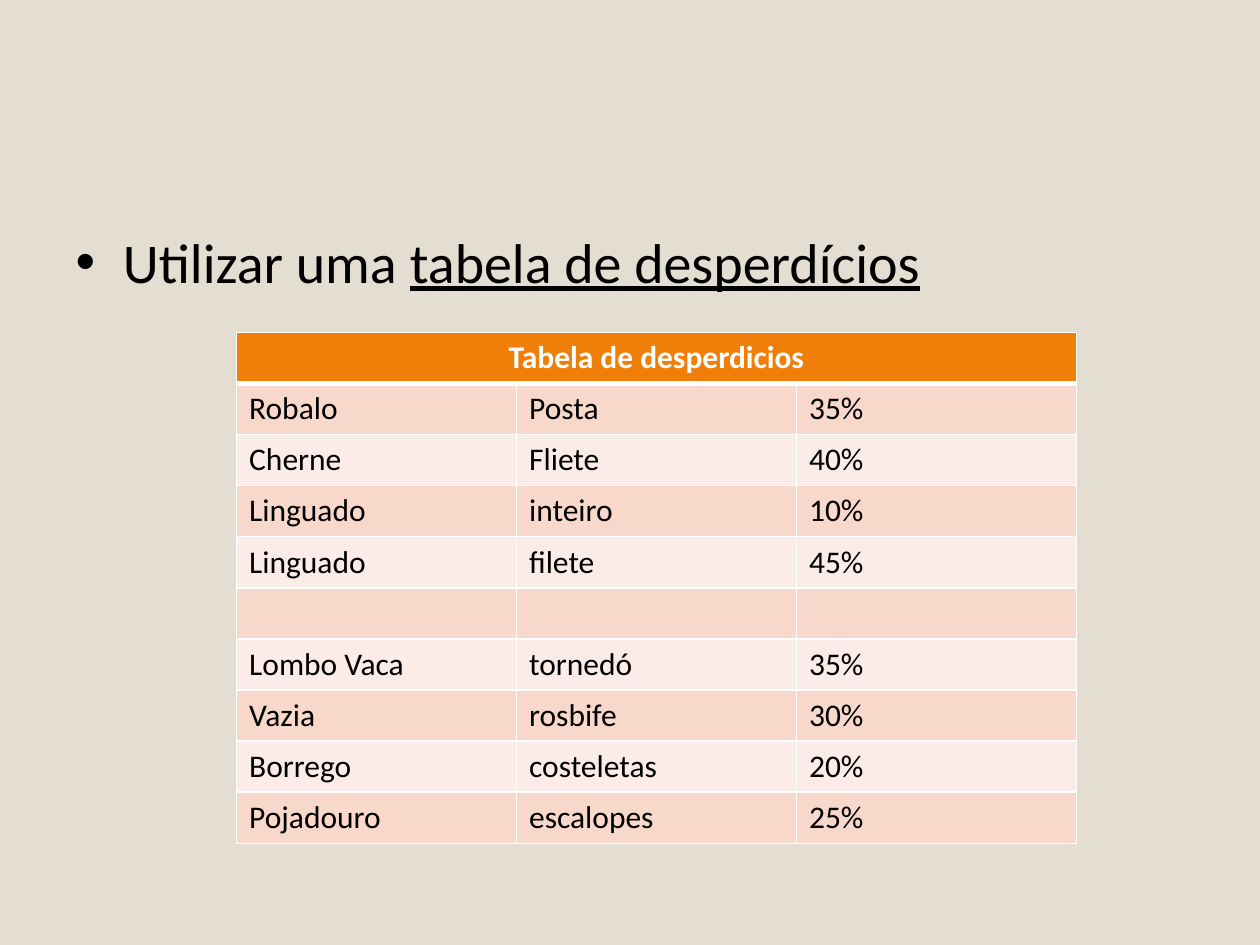
from lxml import etree
from pptx import Presentation
from pptx import util as u
from pptx.dml.color import RGBColor
from pptx.enum import text
from pptx.oxml.ns import qn

SAND = RGBColor(0xE3, 0xDE, 0xD1)
ORANGE = RGBColor(0xF0, 0x7F, 0x09)
ROSE = RGBColor(0xF9, 0xD8, 0xCC)
PALE = RGBColor(0xFC, 0xEC, 0xE7)
BLACK = RGBColor(0, 0, 0)
WHITE = RGBColor(255, 255, 255)
FONT = "Calibri"

HEAD = "Tabela de desperdicios"
ROWS = [
    ("Robalo", "Posta", "35%"),
    ("Cherne", "Fliete", "40%"),
    ("Linguado", "inteiro", "10%"),
    ("Linguado", "filete", "45%"),
    ("", "", ""),
    ("Lombo Vaca", "tornedó", "35%"),
    ("Vazia", "rosbife", "30%"),
    ("Borrego", "costeletas", "20%"),
    ("Pojadouro", "escalopes", "25%"),
]


def style(font, size, color, bold=False):
    font.name = FONT
    font.size = u.Pt(size)
    font.bold = bold
    font.color.rgb = color


def border(cell, **widths):
    props = cell._tc.get_or_add_tcPr()
    for side in "LRTB":
        width = u.Pt(widths.get(side, 1))
        line = etree.SubElement(props, qn(f"a:ln{side}"), w=str(width))
        fill = etree.SubElement(line, qn("a:solidFill"))
        etree.SubElement(fill, qn("a:srgbClr"), val=str(WHITE))


def add_point(slide, left, top, width, height):
    body = slide.placeholders[1]
    body.left, body.top, body.width, body.height = left, top, width, height
    para = body.text_frame.paragraphs[0]
    style(para.font, 32, BLACK)
    para.add_run().text = "Utilizar uma "
    term = para.add_run()
    term.text = "tabela de desperdícios"
    term.font.underline = True


def add_waste(slide, left, top, width, height):
    count = len(ROWS) + 1
    table = slide.shapes.add_table(count, 3, left, top, width, height).table
    for col in table.columns:
        col.width = int(width / 3)
    for row in table.rows:
        row.height = int(height / count)
    head = table.cell(0, 0)
    head.merge(table.cell(0, 2))
    for cell in table.rows[0].cells:
        border(cell, B=3)
        cell.fill.solid()
        cell.fill.fore_color.rgb = ORANGE
    head.text = HEAD
    para = head.text_frame.paragraphs[0]
    para.alignment = text.PP_ALIGN.CENTER
    style(para.font, 18, WHITE, True)
    for i, row in enumerate(ROWS, 1):
        for j, word in enumerate(row):
            cell = table.cell(i, j)
            border(cell, T=3 if i == 1 else 1)
            cell.fill.solid()
            cell.fill.fore_color.rgb = ROSE if i % 2 else PALE
            cell.text = word
            style(cell.text_frame.paragraphs[0].font, 18, BLACK)


def main():
    prs = Presentation()
    prs.slide_width, prs.slide_height = u.Cm(25.4), u.Cm(19.05)
    slide = prs.slides.add_slide(prs.slide_layouts[1])
    slide.background.fill.solid()
    slide.background.fill.fore_color.rgb = SAND
    title = slide.shapes.title
    title.element.getparent().remove(title.element)
    add_point(slide, u.Cm(1.27), u.Cm(4.45), u.Cm(22.86), u.Cm(12.57))
    add_waste(slide, u.Cm(4.77), u.Cm(6.7), u.Cm(16.93), u.Cm(10.3))
    prs.save("out.pptx")


if __name__ == "__main__":
    main()
